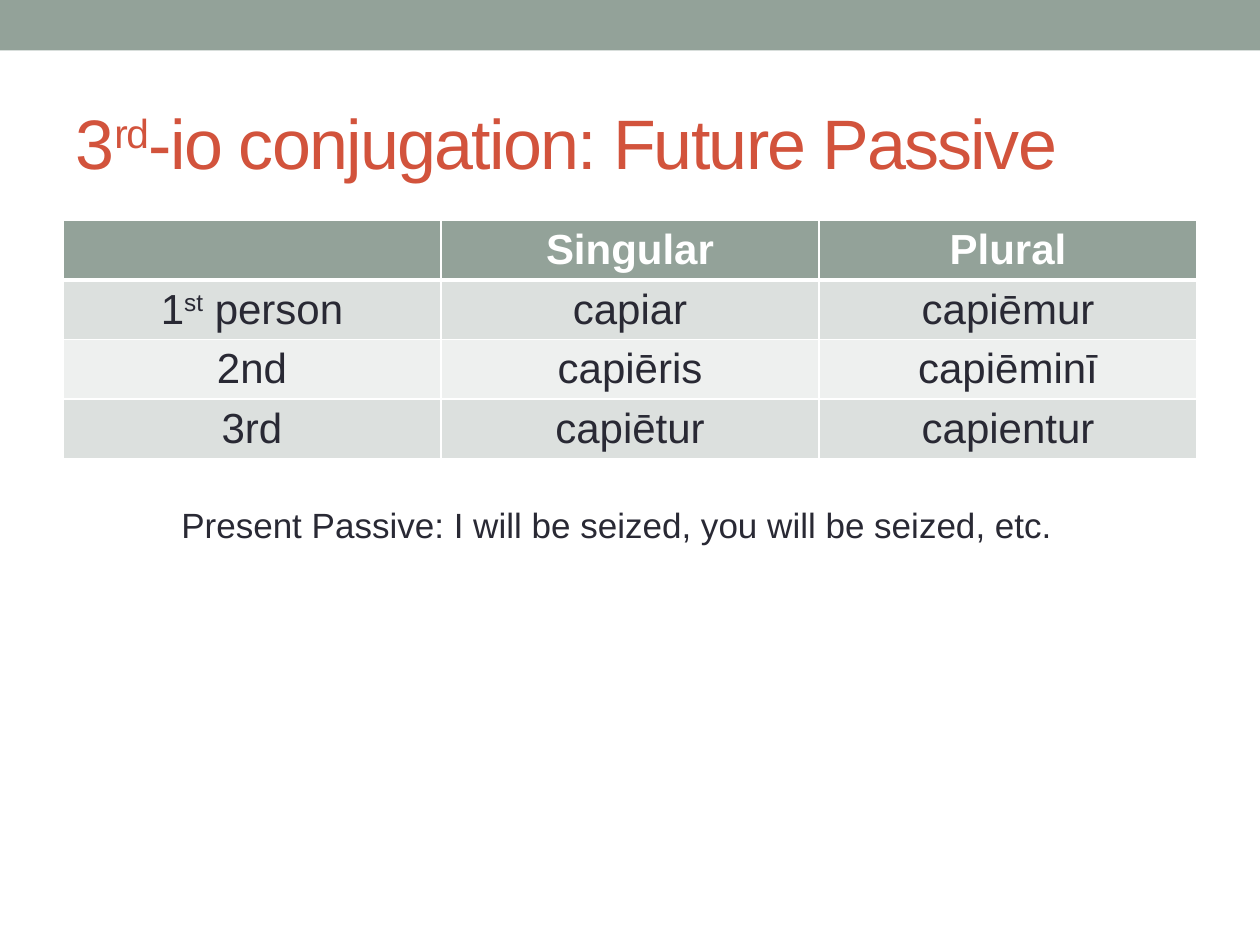
from lxml.etree import SubElement as Sub
from pptx import Presentation
from pptx.dml.color import RGBColor as Rgb
from pptx.enum.shapes import MSO_SHAPE as Shape
from pptx.enum.text import MSO_ANCHOR as Anchor, PP_ALIGN as Align
from pptx.oxml.ns import qn
from pptx.util import Pt
from dataclasses import dataclass

TITLE = ["3", ("rd",), "-io conjugation: Future Passive"]
ROWS = [
    [[], ["Singular"], ["Plural"]],
    [["1", ("st",), " person"], ["capiar"], ["capiēmur"]],
    [["2nd"], ["capiēris"], ["capiēminī"]],
    [["3rd"], ["capiētur"], ["capientur"]],
]
NOTE = ["Present Passive: I will be seized, you will be seized, etc."]


@dataclass
class Theme:
    font: str = "Arial"
    sage: str = "93A299"
    red: str = "D2533C"
    ink: str = "292934"
    white: str = "FFFFFF"
    bands: tuple = ("EEF0EF", "DCE0DE")
    title: int = 40
    cell: int = 24
    note: int = 20


look = Theme()


def paint(item, color):
    item.fill.solid()
    item.fill.fore_color.rgb = Rgb.from_string(color)


def write(frame, parts, size, color, align=Align.LEFT, bold=False, space=0):
    para = frame.paragraphs[0]
    para.alignment = align
    font = para.font
    font.name, font.size, font.bold = look.font, Pt(size), bold
    font.color.rgb = Rgb.from_string(color)
    for part in parts:
        run = para.add_run()
        raised = isinstance(part, tuple)
        run.text = part[0] if raised else part
        props = run._r.get_or_add_rPr()
        if raised:
            props.set("baseline", "30000")
        if space:
            props.set("spc", str(space * 100))


def edge(cell, side, width):
    line = Sub(cell._tc.get_or_add_tcPr(), qn(f"a:ln{side}"), w=str(Pt(width)))
    Sub(Sub(line, qn("a:solidFill")), qn("a:srgbClr"), val=look.white)


deck = Presentation()
deck.slide_width, deck.slide_height = Pt(720), Pt(540)
slide = deck.slides.add_slide(deck.slide_layouts[5])
shapes = slide.shapes

bar = shapes.add_shape(Shape.RECTANGLE, 0, 0, deck.slide_width, Pt(28.8))
bar.shadow.inherit = False
paint(bar, look.sage)
bar.line.fill.background()

head = shapes.title
head.left, head.top, head.width, head.height = Pt(36), Pt(42), Pt(648), Pt(78)
head.text_frame.vertical_anchor = Anchor.MIDDLE
write(head.text_frame, TITLE, look.title, look.red, space=-1)

count = len(ROWS)
grid = shapes.add_table(count, len(ROWS[0]), Pt(36), Pt(126), Pt(648), Pt(34 * count)).table
for r, row in enumerate(ROWS):
    top = r == 0
    for c, parts in enumerate(row):
        cell = grid.cell(r, c)
        for side in "LRTB":
            thick = side == "B" and top or side == "T" and r == 1
            edge(cell, side, 3 if thick else 1)
        paint(cell, look.sage if top else look.bands[r % 2])
        write(cell.text_frame, parts, look.cell, look.white if top else look.ink,
              Align.CENTER, top)

note = shapes.add_textbox(Pt(96.5), Pt(284), Pt(574), Pt(31.5)).text_frame
note.word_wrap = True
write(note, NOTE, look.note, look.ink)

deck.save("out.pptx")
